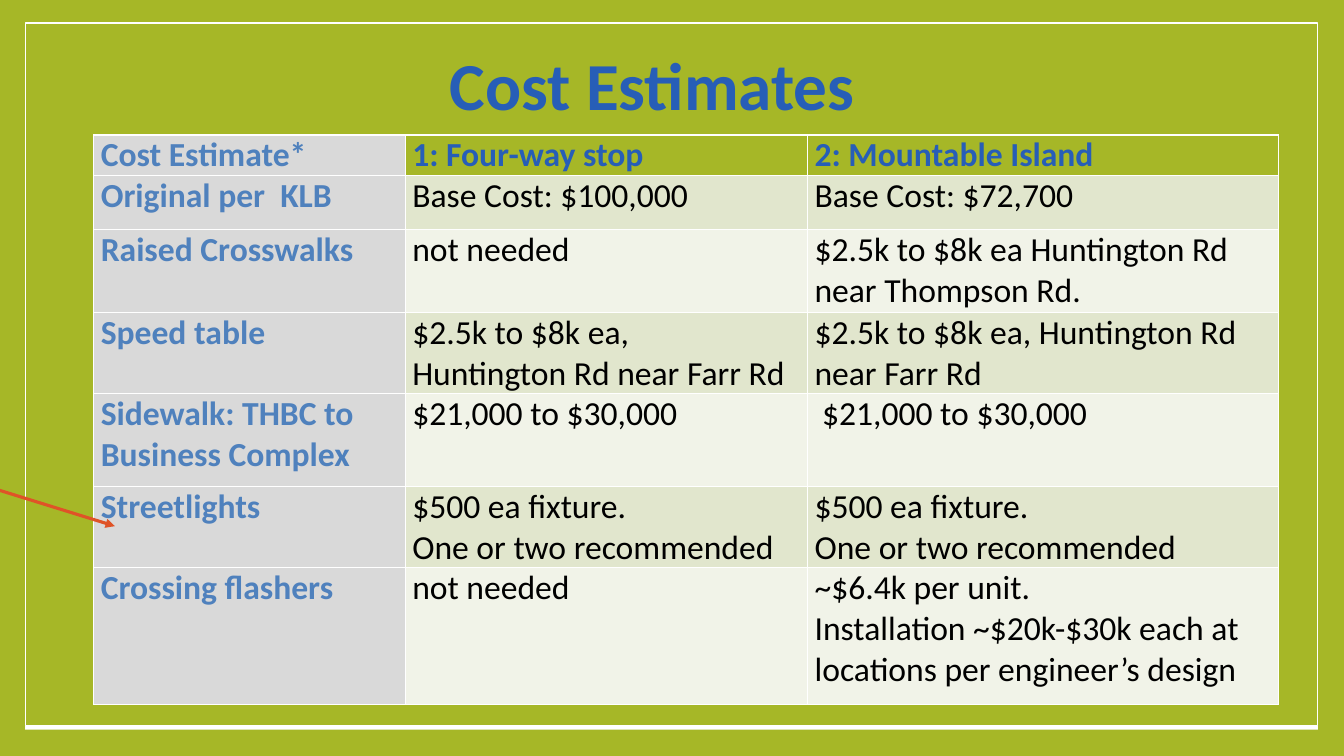
from lxml import etree
from pptx import Presentation
from pptx.dml.color import RGBColor
from pptx.enum import shapes, text
from pptx.oxml.ns import qn
from pptx.util import Inches, Pt

GREEN, WHITE, BLACK = "A6B727", "FFFFFF", "000000"
TITLE_BLUE, LABEL_BLUE = "275EB7", "4F81BD"
LABEL_GREY, ARROW_RED = "D9D9D9", "DF5327"
BANDS = ["E1E6CD", "F1F3E8"]

COLUMN_WIDTHS = [3.09, 3.99, 4.67]
ROW_HEIGHTS = [0.27, 0.54, 0.82, 0.54, 0.93, 0.54, 1.36]
ESTIMATES = [
    ["Cost Estimate*", "1: Four-way stop", "2: Mountable Island"],
    ["Original per  KLB", "Base Cost: $100,000", "Base Cost: $72,700"],
    ["Raised Crosswalks", "not needed",
     "$2.5k to $8k ea Huntington Rd near Thompson Rd."],
    ["Speed table", "$2.5k to $8k ea, \nHuntington Rd near Farr Rd",
     "$2.5k to $8k ea, Huntington Rd near Farr Rd"],
    ["Sidewalk: THBC to Business Complex", "$21,000 to $30,000",
     " $21,000 to $30,000"],
    ["Streetlights", "$500 ea fixture. \nOne or two recommended",
     "$500 ea fixture. \nOne or two recommended"],
    ["Crossing flashers", "not needed",
     "~$6.4k per unit. \nInstallation ~$20k-$30k each at locations per engineer’s design"],
]


def color(hex_string):
    return RGBColor.from_string(hex_string)


def write(paragraph, words, size, font_color, bold):
    paragraph.text = words
    font = paragraph.font
    font.name, font.size, font.bold = "Calibri", Pt(size), bold
    font.color.rgb = color(font_color)


def add_panel(slide, left, top, width, height, fill, line=None):
    panel = slide.shapes.add_shape(
        shapes.MSO_SHAPE.RECTANGLE,
        Inches(left), Inches(top), Inches(width), Inches(height))
    panel.shadow.inherit = False
    panel.fill.solid()
    panel.fill.fore_color.rgb = color(fill)
    if line:
        panel.line.color.rgb = color(line)
        panel.line.width = Pt(1)
    else:
        panel.line.fill.background()


def add_frame(slide, left, top, width, height):
    # The white panel shows as a thick edge below the green one
    add_panel(slide, left, top + 0.04, width, height, WHITE)
    add_panel(slide, left, top, width, height, GREEN, WHITE)


def add_title(slide, left, top, width, height):
    box = slide.shapes.add_textbox(
        Inches(left), Inches(top), Inches(width), Inches(height))
    frame = box.text_frame
    frame.word_wrap = True
    frame.vertical_anchor = text.MSO_ANCHOR.BOTTOM
    paragraph = frame.paragraphs[0]
    paragraph.alignment = text.PP_ALIGN.CENTER
    paragraph.line_spacing = 0.85
    write(paragraph, "Cost Estimates", 48, TITLE_BLUE, True)


def cell_style(row, column):
    """Return the fill, font colour and weight of a cell."""
    if column == 0:
        return LABEL_GREY, LABEL_BLUE, True
    if row == 0:
        return GREEN, TITLE_BLUE, True
    return BANDS[(row - 1) % 2], BLACK, False


def add_estimates(slide, left, top):
    table = slide.shapes.add_table(
        len(ROW_HEIGHTS), len(COLUMN_WIDTHS), Inches(left), Inches(top),
        Inches(sum(COLUMN_WIDTHS)), Inches(sum(ROW_HEIGHTS))).table
    for column, width in zip(table.columns, COLUMN_WIDTHS):
        column.width = Inches(width)
    for row, height in zip(table.rows, ROW_HEIGHTS):
        row.height = Inches(height)
    for r, words_in_row in enumerate(ESTIMATES):
        for c, words in enumerate(words_in_row):
            fill, font_color, bold = cell_style(r, c)
            cell = table.cell(r, c)
            cell.margin_left = cell.margin_right = Inches(0.07)
            cell.margin_top = cell.margin_bottom = 0
            cell.fill.solid()
            cell.fill.fore_color.rgb = color(fill)
            paragraph = cell.text_frame.paragraphs[0]
            paragraph.space_after = Pt(6)
            write(paragraph, words, 24, font_color, bold)


def add_arrow(slide, left, top, width, height):
    arrow = slide.shapes.add_connector(
        shapes.MSO_CONNECTOR.STRAIGHT, Inches(left), Inches(top),
        Inches(left + width), Inches(top + height))
    arrow.line.color.rgb = color(ARROW_RED)
    arrow.line.width = Pt(2.25)
    etree.SubElement(arrow.line._get_or_add_ln(), qn("a:tailEnd"), type="triangle")
    etree.SubElement(arrow._element.spPr, qn("a:effectLst"))


def build_cost_slide(presentation):
    slide = presentation.slides.add_slide(presentation.slide_layouts[6])
    slide.background.fill.solid()
    slide.background.fill.fore_color.rgb = color(GREEN)
    add_frame(slide, 0.25, 0.23, 12.82, 6.97)
    add_title(slide, 0.74, 0.4, 11.46, 0.88)
    add_estimates(slide, 0.93, 1.34)
    add_arrow(slide, -0.18, 4.81, 1.32, 0.41)


def main():
    presentation = Presentation()
    presentation.slide_width = Inches(13.33)
    presentation.slide_height = Inches(7.5)
    build_cost_slide(presentation)
    presentation.save("out.pptx")


if __name__ == "__main__":
    main()
